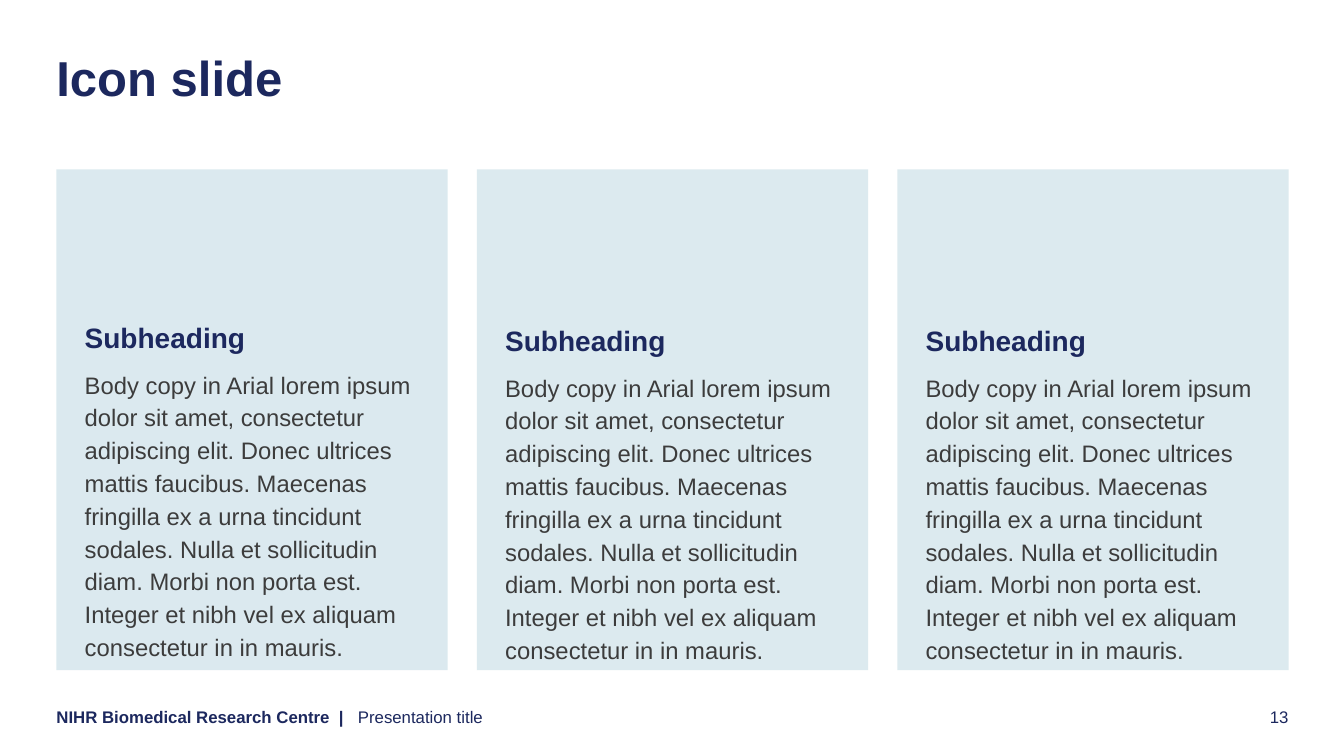
from lxml import etree
from pptx import Presentation
from pptx.dml.color import RGBColor
from pptx.enum import shapes, text
from pptx.oxml.ns import qn
from pptx.util import Inches, Pt

# Content
TITLE = "Icon slide"
FOOTER_NAME = "NIHR Biomedical Research Centre  |"
FOOTER_TITLE = "Presentation title"
PAGE_NUMBER = "13"
BODY = (
    "Body copy in Arial lorem ipsum dolor sit amet, consectetur adipiscing elit. "
    "Donec ultrices mattis faucibus. Maecenas fringilla ex a urna tincidunt sodales. "
    "Nulla et sollicitudin diam. Morbi non porta est. "
    "Integer et nibh vel ex aliquam consectetur in in mauris."
)
# Subheading, body, top inset in inches, fill opacity in percent
CARDS = [
    ("Subheading", BODY, 1.54, 61),
    ("Subheading", BODY, 1.57, 60),
    ("Subheading", BODY, 1.57, 60),
]

# Style and layout
FONT = "Arial"
COLORS = {"navy": "1C285E", "body": "3C3C3C", "card": "C5DCE5"}
MARGIN = 0.56
CARD_TOP, CARD_WIDTH, CARD_HEIGHT = 1.68, 3.88, 4.97
CARD_STEP = 4.17
CARD_INSET = 0.28
FOOTER_TOP, FOOTER_HEIGHT = 7.01, 0.2


def set_insets(frame, left=0, top=0, right=0, bottom=0):
    frame.margin_left, frame.margin_top = Inches(left), Inches(top)
    frame.margin_right, frame.margin_bottom = Inches(right), Inches(bottom)


def add_run(paragraph, words, size, color="navy", bold=False):
    run = paragraph.add_run()
    run.text = words
    run.font.name = FONT
    run.font.size = Pt(size)
    run.font.bold = bold
    run.font.color.rgb = RGBColor.from_string(COLORS[color])


def add_label(slide, box, words, size, bold=False, align=text.PP_ALIGN.LEFT):
    frame = slide.shapes.add_textbox(*map(Inches, box)).text_frame
    frame.word_wrap = True
    set_insets(frame)
    paragraph = frame.paragraphs[0]
    paragraph.alignment = align
    add_run(paragraph, words, size, bold=bold)
    return frame


def add_card(slide, left, subheading, body, top_inset, opacity):
    card = slide.shapes.add_shape(
        shapes.MSO_SHAPE.RECTANGLE, Inches(left), Inches(CARD_TOP),
        Inches(CARD_WIDTH), Inches(CARD_HEIGHT))
    card.shadow.inherit = False
    card.line.fill.background()
    card.fill.solid()
    card.fill.fore_color.rgb = RGBColor.from_string(COLORS["card"])
    fill_color = card.fill._xPr.find(qn("a:solidFill"))[0]
    etree.SubElement(fill_color, qn("a:alpha")).set("val", str(opacity * 1000))

    frame = card.text_frame
    frame.word_wrap = True
    frame.vertical_anchor = text.MSO_ANCHOR.TOP
    set_insets(frame, CARD_INSET, top_inset, CARD_INSET, CARD_INSET)

    heading = frame.paragraphs[0]
    heading.alignment = text.PP_ALIGN.LEFT
    heading.line_spacing = 0.9
    heading.space_after = Pt(8)
    add_run(heading, subheading, 20, bold=True)

    copy_text = frame.add_paragraph()
    copy_text.alignment = text.PP_ALIGN.LEFT
    copy_text.line_spacing = 1.15
    copy_text.space_after = Pt(10)
    add_run(copy_text, body, 17, "body")


def main():
    presentation = Presentation()
    presentation.slide_width = Inches(13.33)
    presentation.slide_height = Inches(7.5)
    slide = presentation.slides.add_slide(presentation.slide_layouts[6])

    # Title
    title = add_label(slide, (MARGIN, 0.52, 11.83, 0.55), TITLE, 35, bold=True)
    title.vertical_anchor = text.MSO_ANCHOR.MIDDLE
    title.paragraphs[0].line_spacing = 0.9

    # Cards
    for index, card in enumerate(CARDS):
        add_card(slide, MARGIN + index * CARD_STEP, *card)

    # Footer
    add_label(slide, (MARGIN, FOOTER_TOP, 3.08, FOOTER_HEIGHT), FOOTER_NAME, 12, bold=True)
    add_label(slide, (3.55, FOOTER_TOP, 4.35, FOOTER_HEIGHT), FOOTER_TITLE, 12)
    add_label(slide, (11.8, FOOTER_TOP, 0.98, FOOTER_HEIGHT), PAGE_NUMBER, 12,
              align=text.PP_ALIGN.RIGHT)

    presentation.save("out.pptx")


if __name__ == "__main__":
    main()
